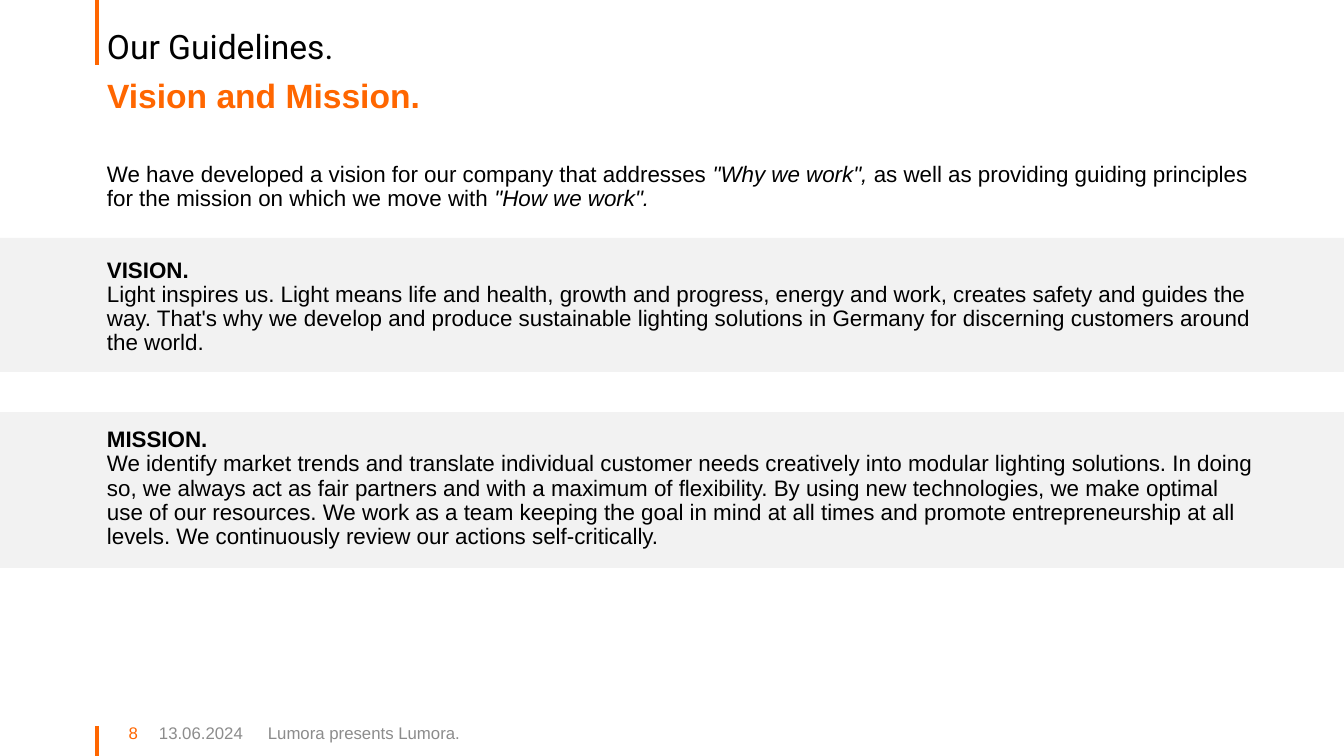
"""Build the Vision and Mission guidelines slide."""
from dataclasses import dataclass

from lxml import etree
from pptx import Presentation, util as u
from pptx.dml.color import RGBColor
from pptx.enum import shapes, text
from pptx.oxml.ns import qn

COLOURS = {"orange": "FF6600", "black": "000000", "grey": "8C8C8C", "band": "F2F2F2"}
SLIDE_WIDTH, SLIDE_HEIGHT = 1344, 756
MARGIN = 97


@dataclass(frozen=True)
class Box:
    left: int
    top: int
    width: int
    height: int


@dataclass(frozen=True)
class Label:
    box: Box
    words: str
    size: int
    colour: str
    font: str = "Arial"
    bold: bool = False
    anchor: text.MSO_ANCHOR = text.MSO_ANCHOR.MIDDLE
    align: text.PP_ALIGN = text.PP_ALIGN.LEFT
    line_spacing: float = 1.0


@dataclass(frozen=True)
class Passage:
    runs: tuple[str, ...]
    space_before: int = 0
    bold: bool = False


TITLE = Label(Box(MARGIN, 74, 1159, 51), "Vision and Mission.", 24, "orange", bold=True,
              anchor=text.MSO_ANCHOR.TOP, line_spacing=0.9)
LABELS = (
    Label(Box(MARGIN, 21, 1159, 51), "Our Guidelines.", 24, "black", font="Roboto",
          anchor=text.MSO_ANCHOR.BOTTOM, line_spacing=0.9),
    Label(Box(MARGIN, 713, 51, 40), "8", 12, "orange", align=text.PP_ALIGN.RIGHT),
    Label(Box(149, 713, 109, 40), "13.06.2024", 12, "grey"),
    Label(Box(258, 713, 454, 40), "Lumora presents Lumora.", 12, "grey"),
)
BANDS = (Box(0, 238, SLIDE_WIDTH, 134), Box(0, 412, SLIDE_WIDTH, 156))
ACCENTS = ((0, 65), (726, SLIDE_HEIGHT))
BODY = Box(107, 163, 1150, 403)
PASSAGES = (
    Passage(("We have developed a vision for our company that addresses ",
             "\"Why we work\", ",
             "as well as providing guiding principles for the mission on which we move with ",
             "\"How we work\".")),
    Passage(("VISION.",), space_before=34, bold=True),
    Passage(("Light inspires us. Light means life and health, growth and progress, energy and "
             "work, creates safety and guides the way. That's why we develop and produce "
             "sustainable lighting solutions in Germany for discerning customers around the "
             "world.",)),
    Passage(("MISSION.",), space_before=52, bold=True),
    Passage(("We identify market trends and translate individual customer needs creatively into "
             "modular lighting solutions. In doing so, we always act as fair partners and with a "
             "maximum of flexibility. By using new technologies, we make optimal use of our "
             "resources. We work as a team keeping the goal in mind at all times and promote "
             "entrepreneurship at all levels. We continuously review our actions "
             "self-critically.",)),
)


def px(length: int) -> u.Emu:
    """Turn px into EMU."""
    return u.Emu(round(length * 914400 / 100.8))


def colour(name: str) -> RGBColor:
    """Look up a named colour."""
    return RGBColor.from_string(COLOURS[name])


def place(box: Box) -> tuple[u.Emu, ...]:
    """Give a box as left, top, width and height in EMU."""
    return px(box.left), px(box.top), px(box.width), px(box.height)


def format_font(font, name: str, size: int, tint: str, bold: bool) -> None:
    """Set the face, size, colour and weight of a font."""
    font.name, font.size, font.bold = name, u.Pt(size), bold
    font.color.rgb = colour(tint)


def fill_label(shape, label: Label) -> None:
    """Position a shape and write its label."""
    shape.left, shape.top, shape.width, shape.height = place(label.box)
    frame = shape.text_frame
    frame.text = label.words
    frame.word_wrap = True
    frame.auto_size = text.MSO_AUTO_SIZE.NONE
    frame.vertical_anchor = label.anchor
    paragraph = frame.paragraphs[0]
    paragraph.alignment = label.align
    paragraph.line_spacing = label.line_spacing
    paragraph.space_before = u.Pt(0)
    format_font(paragraph.runs[0].font, label.font, label.size, label.colour, label.bold)


def add_accent(slide, top: int, bottom: int) -> None:
    """Draw a vertical accent line at the left margin."""
    line = slide.shapes.add_connector(shapes.MSO_CONNECTOR.STRAIGHT,
                                      px(MARGIN), px(top), px(MARGIN), px(bottom))
    line.line.color.rgb = colour("orange")
    line.line.width = u.Pt(3)
    etree.SubElement(line._element.spPr, qn("a:effectLst"))


def add_band(slide, box: Box) -> None:
    """Draw a full-width background band."""
    band = slide.shapes.add_shape(shapes.MSO_SHAPE.RECTANGLE, *place(box))
    band.shadow.inherit = False
    band.fill.solid()
    band.fill.fore_color.rgb = colour("band")
    band.line.fill.background()


def add_body(slide) -> None:
    """Write the introduction, vision and mission."""
    frame = slide.shapes.add_textbox(*place(BODY)).text_frame
    frame.word_wrap = True
    frame.margin_left = frame.margin_top = frame.margin_right = frame.margin_bottom = 0
    for index, passage in enumerate(PASSAGES):
        paragraph = frame.add_paragraph() if index else frame.paragraphs[0]
        paragraph.line_spacing = 0.9
        paragraph.space_before = u.Pt(passage.space_before)
        for position, words in enumerate(passage.runs):
            run = paragraph.add_run()
            run.text = words
            format_font(run.font, "Arial", 16, "black", passage.bold)
            run.font.italic = position % 2 == 1


def main() -> None:
    """Build and save the presentation."""
    presentation = Presentation()
    presentation.slide_width, presentation.slide_height = px(SLIDE_WIDTH), px(SLIDE_HEIGHT)
    slide = presentation.slides.add_slide(presentation.slide_layouts[5])
    fill_label(slide.shapes.title, TITLE)
    for top, bottom in ACCENTS:
        add_accent(slide, top, bottom)
    for label in LABELS:
        fill_label(slide.shapes.add_textbox(*place(label.box)), label)
    for band in BANDS:
        add_band(slide, band)
    add_body(slide)
    presentation.save("out.pptx")


if __name__ == "__main__":
    main()
